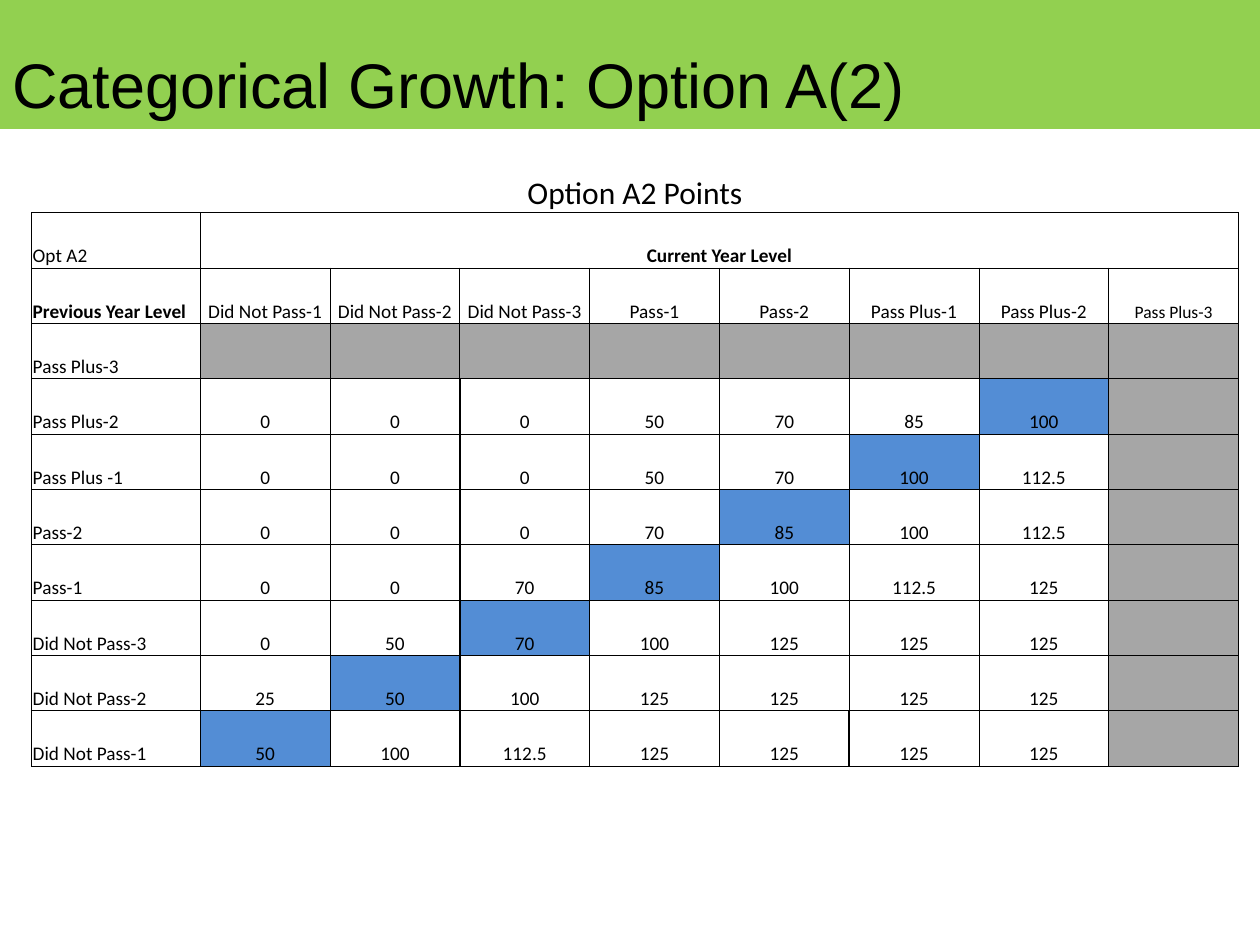
from lxml import etree
from pptx import Presentation
from pptx import util as u
from pptx.dml.color import RGBColor
from pptx.enum import shapes, text
from pptx.oxml.ns import qn

GREEN = RGBColor(0x92, 0xD0, 0x50)
BLUE = RGBColor(0x53, 0x8D, 0xD5)
GRAY = RGBColor(0xA6, 0xA6, 0xA6)
BLACK = RGBColor(0, 0, 0)

HEADING = "Categorical Growth: Option A(2)"
CAPTION = "Option A2 Points"
CORNER, SPANNER = "Opt A2", "Current Year Level"
HEADER = ["Previous Year Level", "Did Not Pass-1", "Did Not Pass-2", "Did Not Pass-3",
          "Pass-1", "Pass-2", "Pass Plus-1", "Pass Plus-2", "Pass Plus-3"]
POINTS = [
    ("Pass Plus-3", []),
    ("Pass Plus-2", [0, 0, 0, 50, 70, 85, 100]),
    ("Pass Plus -1", [0, 0, 0, 50, 70, 100, 112.5]),
    ("Pass-2", [0, 0, 0, 70, 85, 100, 112.5]),
    ("Pass-1", [0, 0, 70, 85, 100, 112.5, 125]),
    ("Did Not Pass-3", [0, 50, 70, 100, 125, 125, 125]),
    ("Did Not Pass-2", [25, 50, 100, 125, 125, 125, 125]),
    ("Did Not Pass-1", [50, 100, 112.5, 125, 125, 125, 125]),
]

COLS = len(HEADER)
GRID = [[CAPTION], [CORNER, SPANNER], HEADER]
GRID += [[level, *map(str, points)] for level, points in POINTS]
ROWS = len(GRID)
FIRST_LEVEL = ROWS - len(POINTS)
BOLD = {SPANNER, HEADER[0]}
THICK_RIGHT = {(row, 2) for row in range(FIRST_LEVEL + 1, ROWS)}
THICK_RIGHT |= {(2, 3), (3, 3)} | {(ROWS - 1, col) for col in (3, 4, 5)}


def style_text(frame, size, font, bold=False):
    for run in frame.paragraphs[0].runs:
        run.font.size = u.Pt(size)
        run.font.name = font
        run.font.bold = bold
        run.font.color.rgb = BLACK


def cell_fill(row, col):
    level = row - FIRST_LEVEL
    if level < 0 or col == 0:
        return None
    if level == 0 or col == COLS - 1:
        return GRAY
    return BLUE if col + level == COLS - 1 else None


def draw_borders(cell, row, col):
    edges = {"lnL": (row, col - 1) in THICK_RIGHT, "lnR": (row, col) in THICK_RIGHT,
             "lnT": False, "lnB": False}
    properties = cell._tc.get_or_add_tcPr()
    for place, (edge, thick) in enumerate(edges.items()):
        line = etree.Element(qn("a:" + edge), w=str(u.Pt(1 if thick else 0.5)))
        if row == 0 and edge != "lnB":
            etree.SubElement(line, qn("a:noFill"))
        else:
            solid = etree.SubElement(line, qn("a:solidFill"))
            etree.SubElement(solid, qn("a:srgbClr"), val=str(BLACK))
        properties.insert(place, line)


def text_size(row, col):
    if row == 0:
        return 18
    return 10 if (row, col) == (2, COLS - 1) else 11


def add_points_table(slide):
    points = slide.shapes.add_table(ROWS, COLS, u.Inches(0.25), u.Inches(1.25),
                                    u.Inches(9.58), u.Inches(4.83)).table
    points.first_row = points.horz_banding = False
    points._tbl.tblPr.find(qn("a:tableStyleId")).text = "{2D5ABB26-0587-4C30-8999-92F81FD0307C}"
    for col, column in enumerate(points.columns):
        column.width = u.Inches(1.03 if col else 1.34)
    points.cell(0, 0).merge(points.cell(0, COLS - 1))
    points.cell(1, 1).merge(points.cell(1, COLS - 1))
    for row in range(ROWS):
        for col in range(COLS):
            cell = points.cell(row, col)
            cell.margin_left = cell.margin_right = cell.margin_top = u.Inches(0.01)
            cell.margin_bottom = 0
            cell.vertical_anchor = text.MSO_ANCHOR.BOTTOM
            color = cell_fill(row, col)
            if color is None:
                cell.fill.background()
            else:
                cell.fill.solid()
                cell.fill.fore_color.rgb = color
            draw_borders(cell, row, col)
            if col < len(GRID[row]):
                label = GRID[row][col]
                cell.text_frame.text = label
                if row == 0 or col:
                    cell.text_frame.paragraphs[0].alignment = text.PP_ALIGN.CENTER
                style_text(cell.text_frame, text_size(row, col), "Calibri", label in BOLD)


def add_heading(slide):
    band = slide.shapes.add_shape(shapes.MSO_SHAPE.RECTANGLE, 0, u.Inches(0.01),
                                  u.Inches(10), u.Inches(1))
    band.shadow.inherit = False
    band.fill.solid()
    band.fill.fore_color.rgb = band.line.color.rgb = GREEN
    band.line.width = u.Pt(2)
    heading = slide.shapes.add_textbox(0, u.Inches(0.33), u.Inches(9), u.Inches(0.67)).text_frame
    heading.word_wrap = True
    heading.vertical_anchor = text.MSO_ANCHOR.MIDDLE
    heading.text = HEADING
    style_text(heading, 36, "Arial")


def main():
    deck = Presentation()
    deck.slide_width, deck.slide_height = u.Inches(10), u.Inches(7.5)
    slide = deck.slides.add_slide(deck.slide_layouts[6])
    add_heading(slide)
    add_points_table(slide)
    deck.save("out.pptx")


if __name__ == "__main__":
    main()
